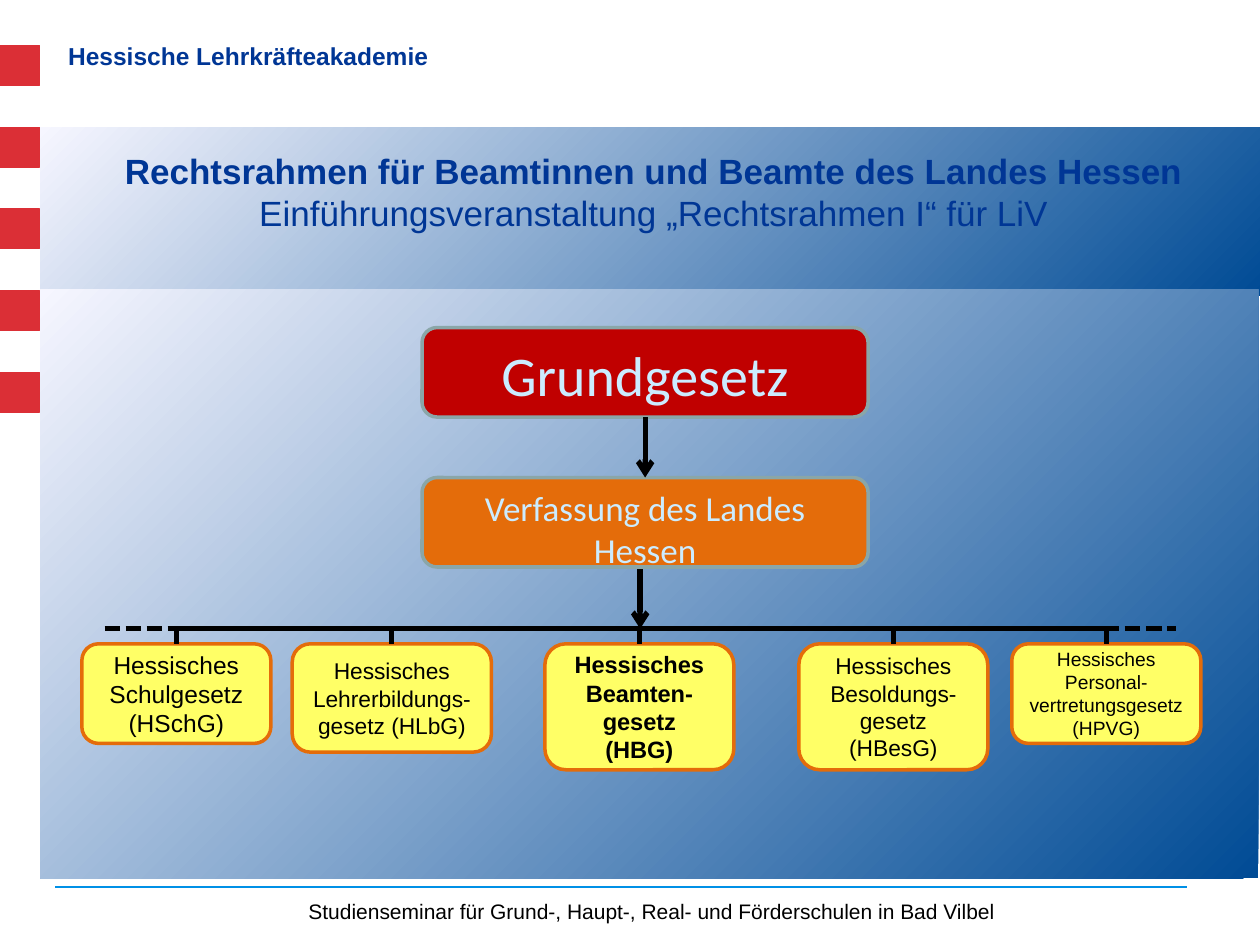
import pptx
import pptx.util
import pptx.dml.color
import pptx.enum.dml
import pptx.enum.shapes
import pptx.enum.text
import pptx.oxml.ns
import lxml.etree

Pt = pptx.util.Pt
RGBColor = pptx.dml.color.RGBColor
SHAPE = pptx.enum.shapes.MSO_SHAPE
ALIGN = pptx.enum.text.PP_ALIGN
ANCHOR = pptx.enum.text.MSO_ANCHOR
qn = pptx.oxml.ns.qn

NAVY = RGBColor(0x00, 0x36, 0x95)
DEEP_BLUE = RGBColor(0x00, 0x4B, 0x95)
PALE_BLUE = RGBColor(0xF6, 0xF6, 0xFF)
ICE_BLUE = RGBColor(0xCC, 0xEC, 0xFF)
RULE_BLUE = RGBColor(0x00, 0x90, 0xE6)
FLAG_RED = RGBColor(0xDB, 0x2F, 0x36)
DARK_RED = RGBColor(0xC0, 0x00, 0x00)
ORANGE = RGBColor(0xE4, 0x6C, 0x0A)
YELLOW = RGBColor(0xFF, 0xFF, 0x66)
GREY_GREEN = RGBColor(0x8A, 0xA6, 0xA8)
BLACK = RGBColor(0, 0, 0)

deck = pptx.Presentation()
deck.slide_width, deck.slide_height = Pt(720), Pt(540)
slide = deck.slides.add_slide(deck.slide_layouts[6])
shapes = slide.shapes


def write(box, lines, size, color, font="Arial", align=ALIGN.CENTER, anchor=ANCHOR.TOP):
    """Fill the box with one paragraph; lines holds (text, bold) pairs."""
    frame = box.text_frame
    frame.word_wrap = True
    frame.vertical_anchor = anchor
    para = frame.paragraphs[0]
    para.alignment = align
    para.font.size = Pt(size)
    for number, (text, bold) in enumerate(lines):
        if number:
            para.add_line_break()
        span = para.add_run()
        span.text = text
        span.font.name = font
        span.font.size = Pt(size)
        span.font.bold = bold
        span.font.color.rgb = color
    return para


def add_line(x1, y1, x2, y2, color=BLACK, width=3, arrow=False):
    line = shapes.add_connector(
        pptx.enum.shapes.MSO_CONNECTOR.STRAIGHT, Pt(x1), Pt(y1), Pt(x2), Pt(y2))
    line.line.color.rgb = color
    line.line.width = Pt(width)
    if arrow:
        lxml.etree.SubElement(line.line._get_or_add_ln(), qn("a:tailEnd"), type="arrow")
    lxml.etree.SubElement(line._element.spPr, qn("a:effectLst"))
    return line


# Background panels and flag squares
for left, top, width, height in [(23, 72.7, 697, 96.5), (23, 165.6, 696.2, 336.2)]:
    panel = shapes.add_shape(SHAPE.RECTANGLE, Pt(left), Pt(top), Pt(width), Pt(height))
    panel.shadow.inherit = False
    panel.line.fill.background()
    panel.fill.gradient()
    panel.fill.gradient_angle = 135
    for stop, color in zip(panel.fill.gradient_stops, (DEEP_BLUE, PALE_BLUE)):
        stop.color.rgb = color
    panel.fill.gradient_stops[0].position = 0
    panel.fill.gradient_stops[1].position = 1

for row in range(5):
    square = shapes.add_shape(
        SHAPE.RECTANGLE, 0, Pt(26 + 46.7 * row), Pt(22.7), Pt(22.7))
    square.shadow.inherit = False
    square.fill.solid()
    square.fill.fore_color.rgb = FLAG_RED
    square.line.color.rgb = FLAG_RED
    square.line.width = Pt(0.75)

# Header, title and footer
header = shapes.add_textbox(Pt(38.9), Pt(21.6), Pt(578), Pt(22.3))
header.text_frame.margin_left = header.text_frame.margin_right = 0
para = write(header, [("Hessische Lehrkräfteakademie", True)], 14, NAVY, align=ALIGN.LEFT)
para.line_spacing = 0.9

title = shapes.add_textbox(Pt(41.8), Pt(70.6), Pt(663.8), Pt(77.8))
title.text_frame.margin_left = title.text_frame.margin_right = Pt(3.6)
write(title, [("Rechtsrahmen für Beamtinnen und Beamte des Landes Hessen", True),
              ("Einführungsveranstaltung „Rechtsrahmen I“ für LiV", False)],
      20, NAVY, anchor=ANCHOR.MIDDLE)

footer = shapes.add_textbox(Pt(105.1), Pt(508.3), Pt(470.9), Pt(23))
write(footer, [("Studienseminar für Grund-, Haupt-, Real- und Förderschulen in Bad Vilbel", False)],
      12, BLACK, align=ALIGN.RIGHT, anchor=ANCHOR.BOTTOM)
add_line(31.7, 506.9, 678.2, 506.9, RULE_BLUE, 0.75)

# The two constitutions
constitutions = []
for text, size, color, top, text_top, text_height in [
    ("Grundgesetz", 32, DARK_RED, 187.2, 190.8, 46.1),
    ("Verfassung des Landes Hessen", 20, ORANGE, 272.9, 274.3, 55.4),
]:
    box = shapes.add_shape(SHAPE.ROUNDED_RECTANGLE, Pt(241.2), Pt(top), Pt(254.9), Pt(51.1))
    box.shadow.inherit = False
    box.fill.solid()
    box.fill.fore_color.rgb = color
    box.line.color.rgb = GREY_GREEN
    box.line.width = Pt(2)
    constitutions.append(box)
    label = shapes.add_textbox(Pt(241.2), Pt(text_top), Pt(254.9), Pt(text_height))
    write(label, [(text, False)], size, ICE_BLUE, "Calibri")

arrow = add_line(368.6, 238.3, 368.6, 272.9, arrow=True)
arrow.begin_connect(constitutions[0], 2)
arrow.end_connect(constitutions[1], 0)

# Distribution bar with dashed ends
BAR_Y = 359.3
add_line(365.8, 325.4, 365.8, BAR_Y, arrow=True)
add_line(100.8, BAR_Y, 632.2, BAR_Y)
for start, end in [(630.7, 671.8), (59.8, 100.8)]:
    dashes = add_line(start, BAR_Y, end, BAR_Y)
    dashes.line.dash_style = pptx.enum.dml.MSO_LINE.SQUARE_DOT

# State laws, each hanging from the bar
LAW_TOP = 367.9
for left, width, height, size, bold, lines in [
    (46.8, 108, 56.9, 14, False, ["Hessisches", "Schulgesetz (HSchG)"]),
    (167, 113.8, 61.9, 13, False, ["Hessisches", "Lehrerbildungs-gesetz (HLbG)"]),
    (311.4, 108, 72, 13.5, True, ["Hessisches", "Beamten-gesetz", "(HBG)"]),
    (456.5, 108, 72, 13, False, ["Hessisches", "Besoldungs-gesetz (HBesG)"]),
    (578.2, 108, 56.9, 11, False, ["Hessisches", "Personal-vertretungsgesetz (HPVG)"]),
]:
    law = shapes.add_shape(
        SHAPE.ROUNDED_RECTANGLE, Pt(left), Pt(LAW_TOP), Pt(width), Pt(height))
    law.shadow.inherit = False
    law.fill.solid()
    law.fill.fore_color.rgb = YELLOW
    law.line.color.rgb = ORANGE
    law.line.width = Pt(2)
    write(law, [(text, bold) for text in lines], size, BLACK, anchor=ANCHOR.MIDDLE)
    middle = left + width / 2
    add_line(middle, BAR_Y, middle, LAW_TOP).end_connect(law, 0)

deck.save("out.pptx")
